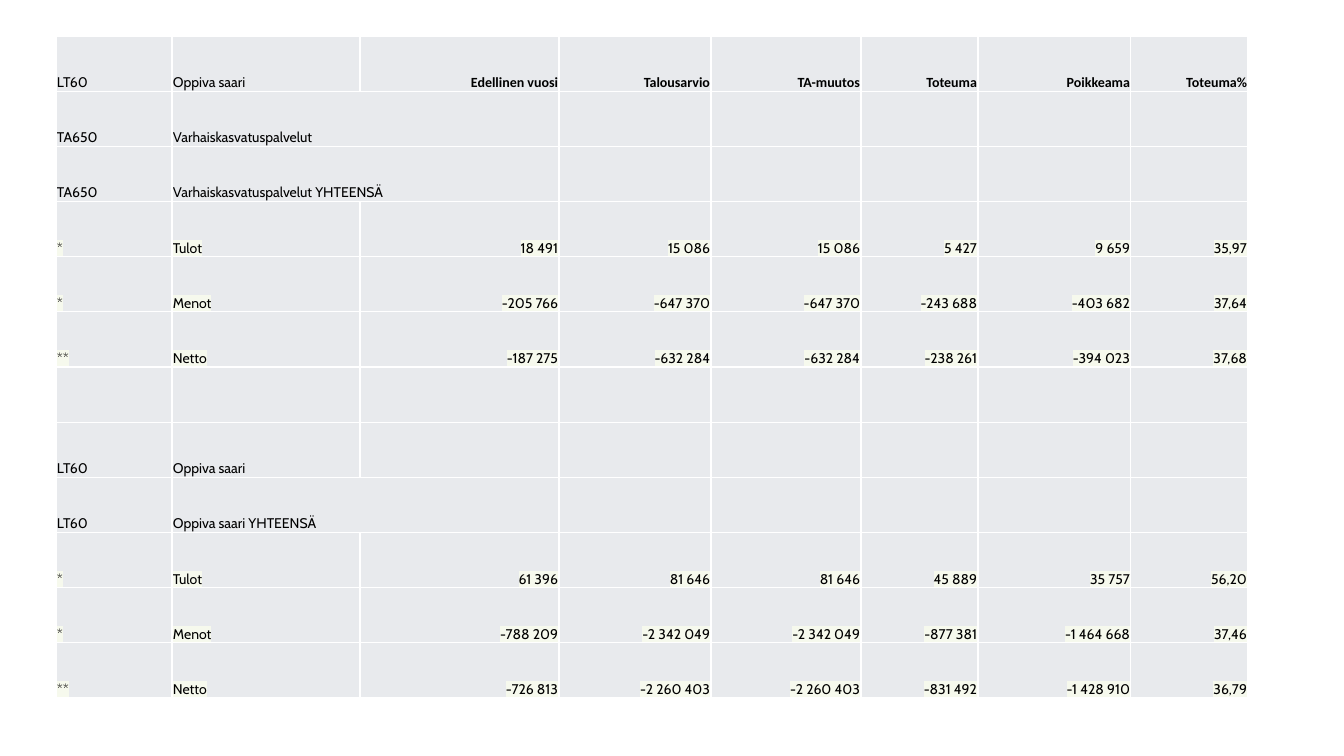
from lxml import etree
from pptx import Presentation
from pptx.dml.color import RGBColor
from pptx.enum.text import MSO_ANCHOR, PP_ALIGN
from pptx.oxml.ns import qn
from pptx.util import Pt

PX = 914400 / 100.8
BOTTOM = MSO_ANCHOR.BOTTOM
LEFT, RIGHT = PP_ALIGN.LEFT, PP_ALIGN.RIGHT

BLACK = RGBColor(0x00, 0x00, 0x00)
WHITE = RGBColor(0xFF, 0xFF, 0xFF)
CELL_GREY = RGBColor(0xE8, 0xEA, 0xED)
HIGHLIGHT = RGBColor(0xF6, 0xF9, 0xED)

COL_WIDTHS = [116, 188, 199, 152, 150, 117, 153, 117]
ROWS = [
    ["LT60", "Oppiva saari", "Edellinen vuosi", "Talousarvio", "TA-muutos",
     "Toteuma", "Poikkeama", "Toteuma%"],
    ["TA650", "Varhaiskasvatuspalvelut"],
    ["TA650", "Varhaiskasvatuspalvelut YHTEENSÄ"],
    ["*", "Tulot", "18 491", "15 086", "15 086", "5 427", "9 659", "35,97"],
    ["*", "Menot", "-205 766", "-647 370", "-647 370", "-243 688", "-403 682", "37,64"],
    ["**", "Netto", "-187 275", "-632 284", "-632 284", "-238 261", "-394 023", "37,68"],
    [],
    ["LT60", "Oppiva saari"],
    ["LT60", "Oppiva saari YHTEENSÄ"],
    ["*", "Tulot", "61 396", "81 646", "81 646", "45 889", "35 757", "56,20"],
    ["*", "Menot", "-788 209", "-2 342 049", "-2 342 049", "-877 381", "-1 464 668", "37,46"],
    ["**", "Netto", "-726 813", "-2 260 403", "-2 260 403", "-831 492", "-1 428 910", "36,79"],
]
MERGED_ROWS = [1, 2, 8]


def px(n):
    return round(n * PX)


def add_solid_fill(parent, tag, color):
    """Add a child element that holds a colour."""
    el = etree.SubElement(parent, qn(tag))
    etree.SubElement(el, qn("a:srgbClr"), val=str(color))
    return el


def format_cell(cell):
    cell.margin_left = cell.margin_right = cell.margin_top = px(1)
    cell.margin_bottom = 0
    cell.vertical_anchor = BOTTOM
    tc_pr = cell._tc.get_or_add_tcPr()
    for side in ("a:lnL", "a:lnR", "a:lnT", "a:lnB"):
        ln = etree.SubElement(tc_pr, qn(side), w=str(Pt(1)))
        add_solid_fill(ln, "a:solidFill", WHITE)
    cell.fill.solid()
    cell.fill.fore_color.rgb = CELL_GREY


def write_cell(cell, text, align, heading, highlighted):
    cell.text_frame.text = text
    p = cell.text_frame.paragraphs[0]
    p.alignment = align
    font = p.runs[0].font
    font.size = Pt(10)
    font.bold = heading
    font.color.rgb = BLACK
    if highlighted:
        add_solid_fill(font._element, "a:highlight", HIGHLIGHT)
    font.name = "Calibri" if heading else "Cabin"


def add_budget_table(slide, x, y, w, h):
    table = slide.shapes.add_table(len(ROWS), len(COL_WIDTHS),
                                   px(x), px(y), px(w), px(h)).table
    table.first_row = table.horz_banding = False
    for col, width in zip(table.columns, COL_WIDTHS):
        col.width = px(width)
    for cell in table.iter_cells():
        format_cell(cell)

    # Texts: amounts to the right, figures of starred rows highlighted
    for i, texts in enumerate(ROWS):
        for j, text in enumerate(texts):
            write_cell(table.cell(i, j), text, RIGHT if j > 1 else LEFT,
                       heading=i == 0 and j > 1,
                       highlighted=texts[0].startswith("*"))

    # Long names run over two columns
    for i in MERGED_ROWS:
        table.cell(i, 1).merge(table.cell(i, 2))


def main():
    prs = Presentation()
    prs.slide_width, prs.slide_height = px(1344), px(756)
    slide = prs.slides.add_slide(prs.slide_layouts[6])
    add_budget_table(slide, 56, 36, sum(COL_WIDTHS), 662)
    prs.save("out.pptx")


if __name__ == "__main__":
    main()
